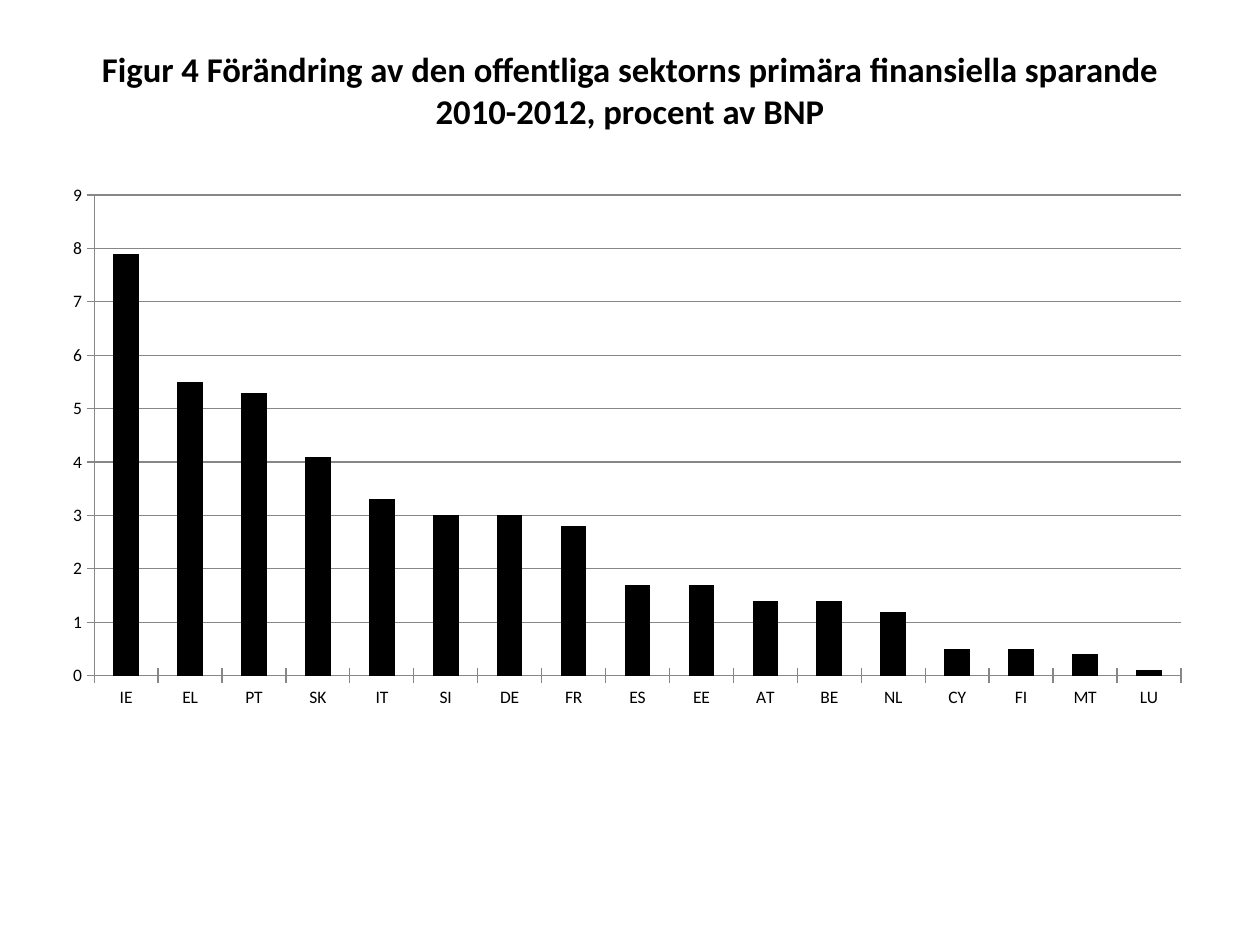
"""Build a slide with a column chart of changes in public-sector primary saving."""
import dataclasses

import lxml.etree
import pptx
import pptx.chart.data
import pptx.dml.color
import pptx.enum.chart
import pptx.enum.text
import pptx.oxml.ns
import pptx.util

TITLE = ("Figur 4 Förändring av den offentliga sektorns primära finansiella sparande "
         "2010-2012, procent av BNP")
SAVING = {
    "IE": 7.9, "EL": 5.5, "PT": 5.3, "SK": 4.1, "IT": 3.3, "SI": 3, "DE": 3,
    "FR": 2.8, "ES": 1.7, "EE": 1.7, "AT": 1.4, "BE": 1.4, "NL": 1.2,
    "CY": 0.5, "FI": 0.5, "MT": 0.4, "LU": 0.1,
}
SLIDE = (10, 7.5)
TITLE_AREA = (0.5, 0.3, 9, 1.09)
CHART_AREA = (0.43, 1.47, 9.07, 4.25)
PLOT_SHARES = {"x": 0.035, "y": 0.017, "w": 0.951, "h": 0.899}


@dataclasses.dataclass(frozen=True)
class Theme:
    """Hold the colours and type sizes."""
    font: str = "Calibri"
    ink: pptx.dml.color.RGBColor = pptx.dml.color.RGBColor(0, 0, 0)
    rule: pptx.dml.color.RGBColor = pptx.dml.color.RGBColor(0x87, 0x87, 0x87)
    title_size: float = 19.8
    chart_size: float = 10
    rule_width: float = 0.75


THEME = Theme()


def style_font(font, size, bold=False):
    """Apply the theme's typeface and ink."""
    font.name, font.size, font.bold = THEME.font, pptx.util.Pt(size), bold
    font.color.rgb = THEME.ink


def style_line(line):
    """Draw a thin grey rule."""
    line.color.rgb = THEME.rule
    line.width = pptx.util.Pt(THEME.rule_width)


def place_plot(chart, shares):
    """Fix the inner plot area as shares of the chart."""
    qn = pptx.oxml.ns.qn
    plot_area = chart.plots[0]._element.getparent()
    for old in plot_area.findall(qn("c:layout")):
        plot_area.remove(old)
    layout = lxml.etree.Element(qn("c:layout"))
    manual = lxml.etree.SubElement(layout, qn("c:manualLayout"))
    settings = {"layoutTarget": "inner", "xMode": "edge", "yMode": "edge", **shares}
    for tag, value in settings.items():
        lxml.etree.SubElement(manual, qn(f"c:{tag}")).set("val", str(value))
    plot_area.insert(0, layout)


def add_title(page):
    """Set the heading in the upper part of its placeholder."""
    box = page.shapes.title
    box.left, box.top, box.width, box.height = map(pptx.util.Inches, TITLE_AREA)
    frame = box.text_frame
    frame.text = TITLE
    frame.word_wrap = True
    frame.auto_size = pptx.enum.text.MSO_AUTO_SIZE.NONE
    frame.vertical_anchor = pptx.enum.text.MSO_ANCHOR.MIDDLE
    frame.margin_bottom = pptx.util.Inches(0.32)
    para = frame.paragraphs[0]
    para.alignment = pptx.enum.text.PP_ALIGN.CENTER
    style_font(para.font, THEME.title_size, bold=True)


def add_saving_chart(page):
    """Add the sorted columns with their axes."""
    data = pptx.chart.data.CategoryChartData()
    data.categories = list(SAVING)
    data.add_series("Series 1", list(SAVING.values()))
    chart = page.shapes.add_chart(
        pptx.enum.chart.XL_CHART_TYPE.COLUMN_CLUSTERED,
        *map(pptx.util.Inches, CHART_AREA), data).chart
    chart.has_legend = chart.has_title = False
    style_font(chart.font, THEME.chart_size)
    plot = chart.plots[0]
    plot.gap_width = 150
    plot.vary_by_categories = False
    fill = plot.series[0].format.fill
    fill.solid()
    fill.fore_color.rgb = THEME.ink
    for axis in (chart.category_axis, chart.value_axis):
        axis.major_tick_mark = pptx.enum.chart.XL_TICK_MARK.CROSS
        style_line(axis.format.line)
    scale = chart.value_axis
    scale.minimum_scale, scale.maximum_scale, scale.major_unit = 0, 9, 1
    scale.has_major_gridlines = True
    style_line(scale.major_gridlines.format.line)
    place_plot(chart, PLOT_SHARES)


def main():
    """Assemble and save the deck."""
    deck = pptx.Presentation()
    deck.slide_width, deck.slide_height = map(pptx.util.Inches, SLIDE)
    page = deck.slides.add_slide(deck.slide_layouts.get_by_name("Title Only"))
    add_title(page)
    add_saving_chart(page)
    deck.save("out.pptx")


if __name__ == "__main__":
    main()
